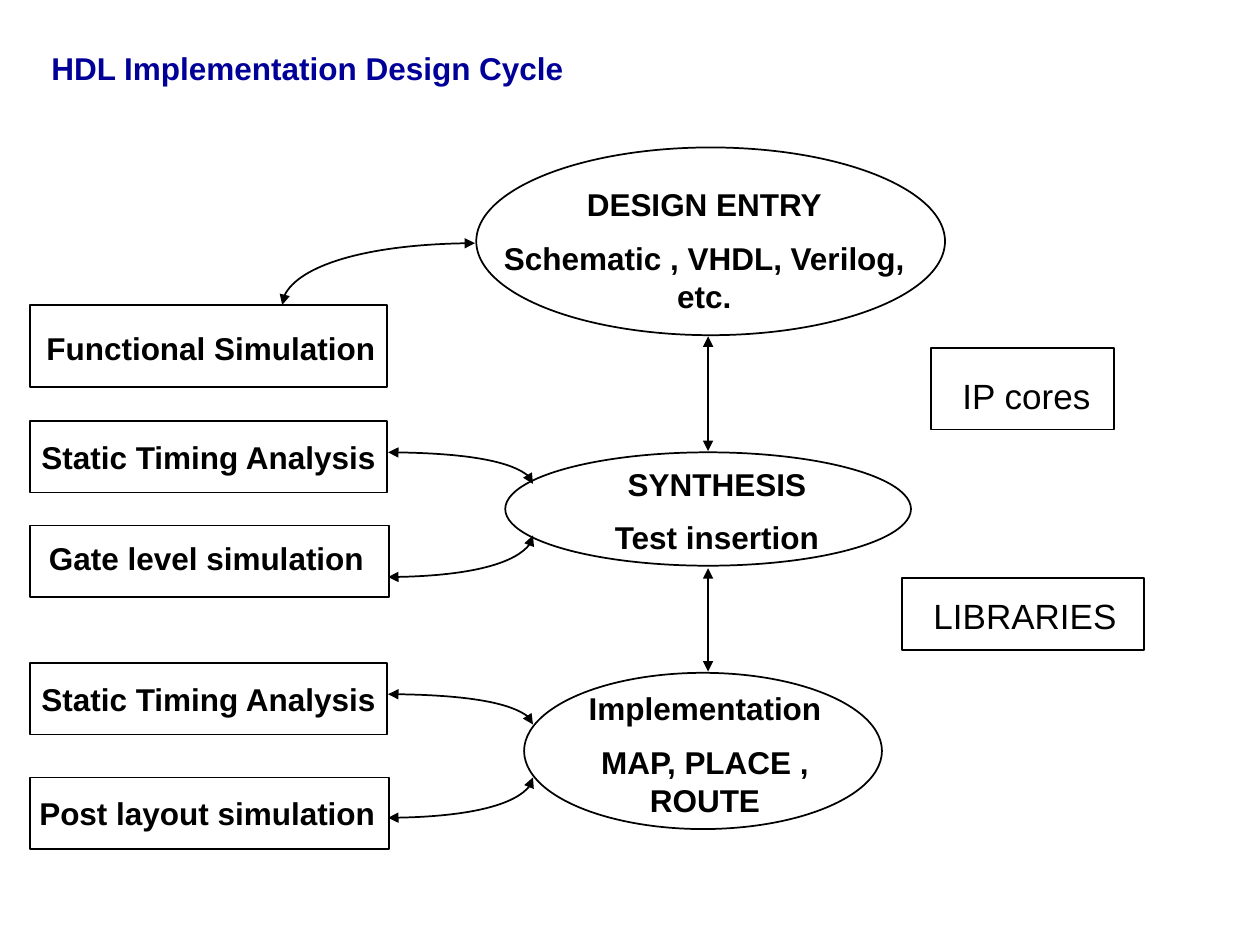
import lxml.etree
import pptx
import pptx.dml.color
import pptx.enum.shapes
import pptx.enum.text
import pptx.oxml.ns
import pptx.util

qn = pptx.oxml.ns.qn
Align = pptx.enum.text.PP_ALIGN
Anchor = pptx.enum.text.MSO_ANCHOR
Shape = pptx.enum.shapes.MSO_SHAPE
COLORS = {"ink": "000000", "paper": "FFFFFF", "title": "000099"}

deck = pptx.Presentation()
deck.slide_width = pptx.util.Inches(10)
deck.slide_height = pptx.util.Inches(7.5)
page = deck.slides.add_slide(deck.slide_layouts[6])
column = deck.slide_width / 100
row = deck.slide_height / 75


def write(frame, text, size=18, bold=True, color="ink", align=Align.CENTER,
          anchor=Anchor.TOP, wrap=True, margin=1):
    frame.word_wrap = wrap
    frame.vertical_anchor = anchor
    frame.margin_left = frame.margin_right = int(margin * column)
    for index, line in enumerate(text.split("\n")):
        para = frame.paragraphs[0] if index == 0 else frame.add_paragraph()
        para.alignment = align
        para.space_before = pptx.util.Pt(9 if index else 0)
        span = para.add_run()
        span.text = line
        span.font.name = "Arial"
        span.font.size = pptx.util.Pt(size)
        span.font.bold = bold
        span.font.color.rgb = pptx.dml.color.RGBColor.from_string(COLORS[color])


def outline(shape, arrows=False):
    shape.line.color.rgb = pptx.dml.color.RGBColor.from_string(COLORS["ink"])
    shape.line.width = pptx.util.Pt(1)
    properties = shape._element.spPr
    if arrows:
        for end in ("a:headEnd", "a:tailEnd"):
            lxml.etree.SubElement(properties.find(qn("a:ln")), qn(end), type="triangle")
    lxml.etree.SubElement(properties, qn("a:effectLst"))


outlines = [
    (Shape.OVAL, 37.8, 11.7, 37.2, 14.9, ""),
    (Shape.OVAL, 40.1, 35.9, 32.2, 9, ""),
    (Shape.OVAL, 41.6, 53.4, 28.4, 12.4, ""),
    (Shape.RECTANGLE, 2.4, 24.2, 28.3, 6.5, ""),
    (Shape.RECTANGLE, 2.4, 33.4, 28.3, 5.7, "Static Timing Analysis"),
    (Shape.RECTANGLE, 2.4, 41.7, 28.5, 5.7, ""),
    (Shape.RECTANGLE, 2.4, 52.6, 28.3, 5.7, "Static Timing Analysis"),
    (Shape.RECTANGLE, 2.4, 61.7, 28.5, 5.7, ""),
    (Shape.RECTANGLE, 73.9, 27.6, 14.5, 6.5, ""),
    (Shape.RECTANGLE, 71.6, 45.9, 19.2, 5.7, ""),
]
for kind, left, top, width, height, text in outlines:
    box = page.shapes.add_shape(kind, int(left * column), int(top * row),
                                int(width * column), int(height * row))
    box.fill.solid()
    box.fill.fore_color.rgb = pptx.dml.color.RGBColor.from_string(COLORS["paper"])
    outline(box)
    if text:
        write(box.text_frame, text, anchor=Anchor.MIDDLE, wrap=False)

left_aligned = {"align": Align.LEFT}
side_note = {"align": Align.LEFT, "size": 20, "bold": False}
labels = [
    (3.1, 3.4, 54.6, 9, "HDL Implementation Design Cycle", {"color": "title", **left_aligned}),
    (38.5, 14.2, 34.8, 11.5, "DESIGN ENTRY\nSchematic , VHDL, Verilog, etc.", {}),
    (44.2, 36.4, 25.4, 8.5, "SYNTHESIS\nTest insertion", {}),
    (42.5, 54.2, 26.9, 11.5, "Implementation\nMAP, PLACE , ROUTE", {}),
    (2.7, 25.6, 28.1, 4, "Functional Simulation", {"wrap": False, **left_aligned}),
    (2.9, 42.3, 30, 4, "Gate level simulation", left_aligned),
    (2.9, 62.5, 27.1, 4.1, "Post layout simulation",
     {"wrap": False, "anchor": Anchor.MIDDLE, "margin": 0}),
    (75.4, 29.2, 13.8, 4.3, "IP cores", side_note),
    (73.1, 46.7, 16.9, 4.3, "LIBRARIES", side_note),
]
for left, top, width, height, text, style in labels:
    label = page.shapes.add_textbox(int(left * column), int(top * row),
                                    int(width * column), int(height * row))
    write(label.text_frame, text, **style)

for top, bottom in [(26.7, 35.8), (45.1, 53.3)]:
    arrow = page.shapes.add_connector(
        pptx.enum.shapes.MSO_CONNECTOR.STRAIGHT,
        int(56.2 * column), int(top * row), int(56.2 * column), int(bottom * row))
    outline(arrow, arrows=True)

bend = 0.55
quarter_arcs = [
    (37.7, 19.3, 22.4, 24.2),
    (30.8, 35.9, 42.3, 38.4),
    (30.8, 45.8, 42.3, 42.5),
    (30.8, 55.1, 42.3, 57.5),
    (30.8, 64.9, 42.3, 61.7),
]
for flat_x, flat_y, steep_x, steep_y in quarter_arcs:
    points = [
        (flat_x + bend * (steep_x - flat_x), flat_y),
        (steep_x, steep_y + bend * (flat_y - steep_y)),
        (steep_x, steep_y),
    ]
    builder = page.shapes.build_freeform(int(flat_x * column), int(flat_y * row))
    builder.add_line_segments([(int(x * column), int(y * row)) for x, y in points], close=False)
    curve = builder.convert_to_shape()
    curve.fill.background()
    outline(curve, arrows=True)
    segments = list(curve._element.spPr.iter(qn("a:lnTo")))
    bezier = lxml.etree.SubElement(segments[0].getparent(), qn("a:cubicBezTo"))
    for segment in segments:
        bezier.append(segment[0])
        segment.getparent().remove(segment)

deck.save("out.pptx")
